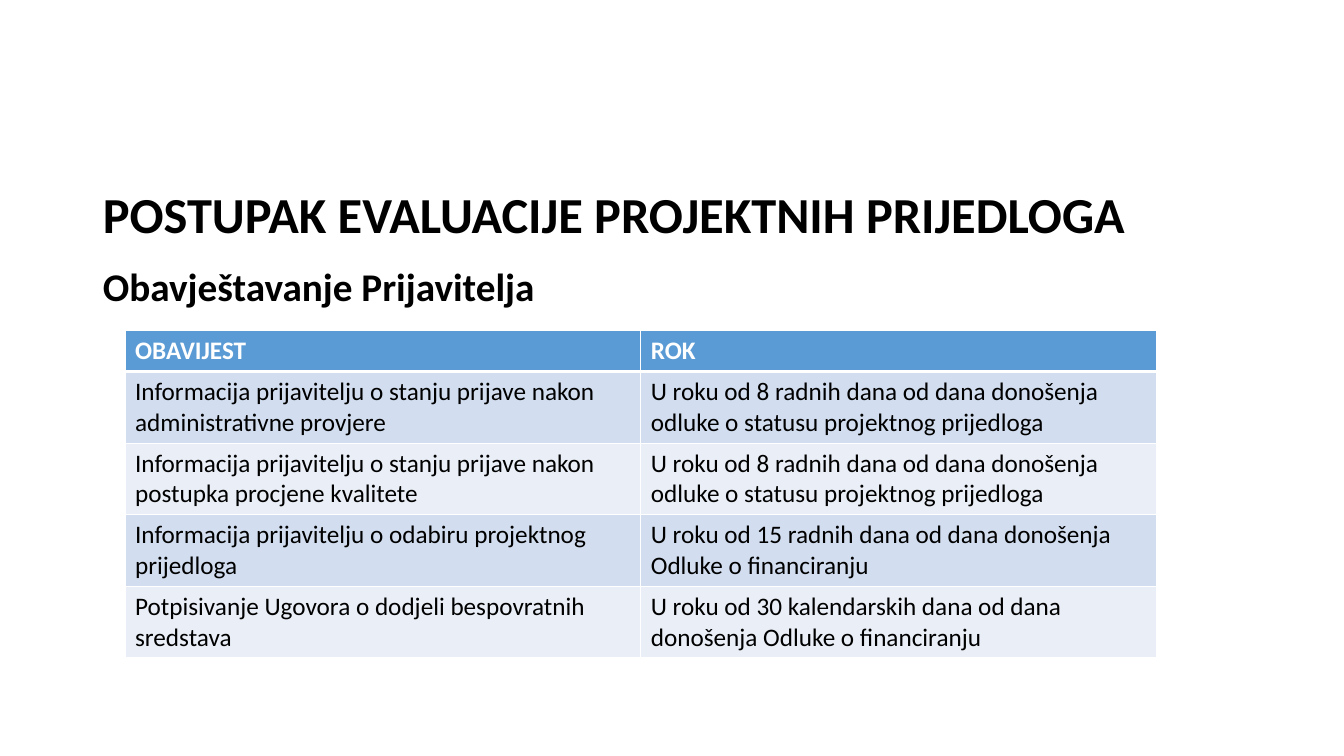
from lxml.etree import SubElement
from pptx import Presentation
from pptx.dml.color import RGBColor
from pptx.enum.text import MSO_ANCHOR, MSO_AUTO_SIZE, PP_ALIGN
from pptx.oxml.ns import qn
from pptx.util import Inches, Pt

FONT = "Calibri"
BLACK, WHITE = "000000", "FFFFFF"
HEADER_BLUE = "5B9BD5"
BANDS = ("D2DEEF", "EAEFF7")

NOTICES = [
    ("OBAVIJEST", "ROK"),
    ("Informacija prijavitelju o stanju prijave nakon administrativne provjere",
     "U roku od 8 radnih dana od dana donošenja odluke o statusu projektnog prijedloga"),
    ("Informacija prijavitelju o stanju prijave nakon postupka procjene kvalitete",
     "U roku od 8 radnih dana od dana donošenja odluke o statusu projektnog prijedloga"),
    ("Informacija prijavitelju o odabiru projektnog prijedloga",
     "U roku od 15 radnih dana od dana donošenja Odluke o financiranju"),
    ("Potpisivanje Ugovora o dodjeli bespovratnih sredstava",
     "U roku od 30 kalendarskih dana od dana donošenja Odluke o financiranju"),
]


def color(hex_value):
    return RGBColor.from_string(hex_value)


def write(paragraph, text, size, hex_value, bold):
    run = paragraph.add_run()
    run.text = text
    run.font.name = FONT
    run.font.size = Pt(size)
    run.font.bold = bold
    run.font.color.rgb = color(hex_value)


def fill_placeholder(holder, box, text, size, anchor):
    """Move a placeholder to its box and give it one bold line."""
    holder.left, holder.top, holder.width, holder.height = map(Inches, box)
    frame = holder.text_frame
    frame.word_wrap = True
    frame.auto_size = MSO_AUTO_SIZE.NONE
    frame.vertical_anchor = anchor
    line = frame.paragraphs[0]
    line.alignment = PP_ALIGN.LEFT
    line.line_spacing = 0.9
    line.space_before = Pt(0)
    write(line, text, size, BLACK, True)
    return frame


def add_heading(slide, box):
    frame = fill_placeholder(slide.shapes.title, box,
                             "POSTUPAK EVALUACIJE PROJEKTNIH PRIJEDLOGA",
                             36, MSO_ANCHOR.MIDDLE)
    frame.margin_top = Inches(0.6)  # the heading sits low in its box


def add_subheading(slide, box):
    body = slide.placeholders[1]
    properties = body.text_frame.paragraphs[0]._p.get_or_add_pPr()
    properties.set("marL", "0")
    properties.set("indent", "0")
    SubElement(properties, qn("a:buNone"))
    fill_placeholder(body, box, "Obavještavanje Prijavitelja", 28, MSO_ANCHOR.TOP)


def set_borders(cell, **widths):
    properties = cell._tc.get_or_add_tcPr()
    for side in "LRTB":
        border = SubElement(properties, qn(f"a:ln{side}"),
                            w=str(Pt(widths.get(side, 1))))
        paint = SubElement(border, qn("a:solidFill"))
        SubElement(paint, qn("a:srgbClr"), val=WHITE)


def add_notices(slide, box):
    left, top, width, height = box
    header_height = 0.4
    row_height = (height - header_height) / (len(NOTICES) - 1)
    table = slide.shapes.add_table(len(NOTICES), 2, *map(Inches, box)).table
    for column in table.columns:
        column.width = Inches(width / 2)
    for index, texts in enumerate(NOTICES):
        header = index == 0
        table.rows[index].height = Inches(header_height if header else row_height)
        for cell, text in zip(table.rows[index].cells, texts):
            # The line under the header is thicker, seen from both rows
            set_borders(cell, B=3 if header else 1, T=3 if index == 1 else 1)
            cell.fill.solid()
            cell.fill.fore_color.rgb = color(
                HEADER_BLUE if header else BANDS[(index - 1) % 2])
            write(cell.text_frame.paragraphs[0], text, 18,
                  WHITE if header else BLACK, header)


def main():
    deck = Presentation()
    deck.slide_width, deck.slide_height = Inches(13.33), Inches(7.5)
    slide = deck.slides.add_slide(deck.slide_layouts[1])
    add_heading(slide, (0.92, 1.15, 11.5, 1.45))
    add_subheading(slide, (0.92, 2.6, 12.04, 4.31))
    add_notices(slide, (1.24, 3.28, 10.23, 3.2))
    deck.save("out.pptx")


if __name__ == "__main__":
    main()
